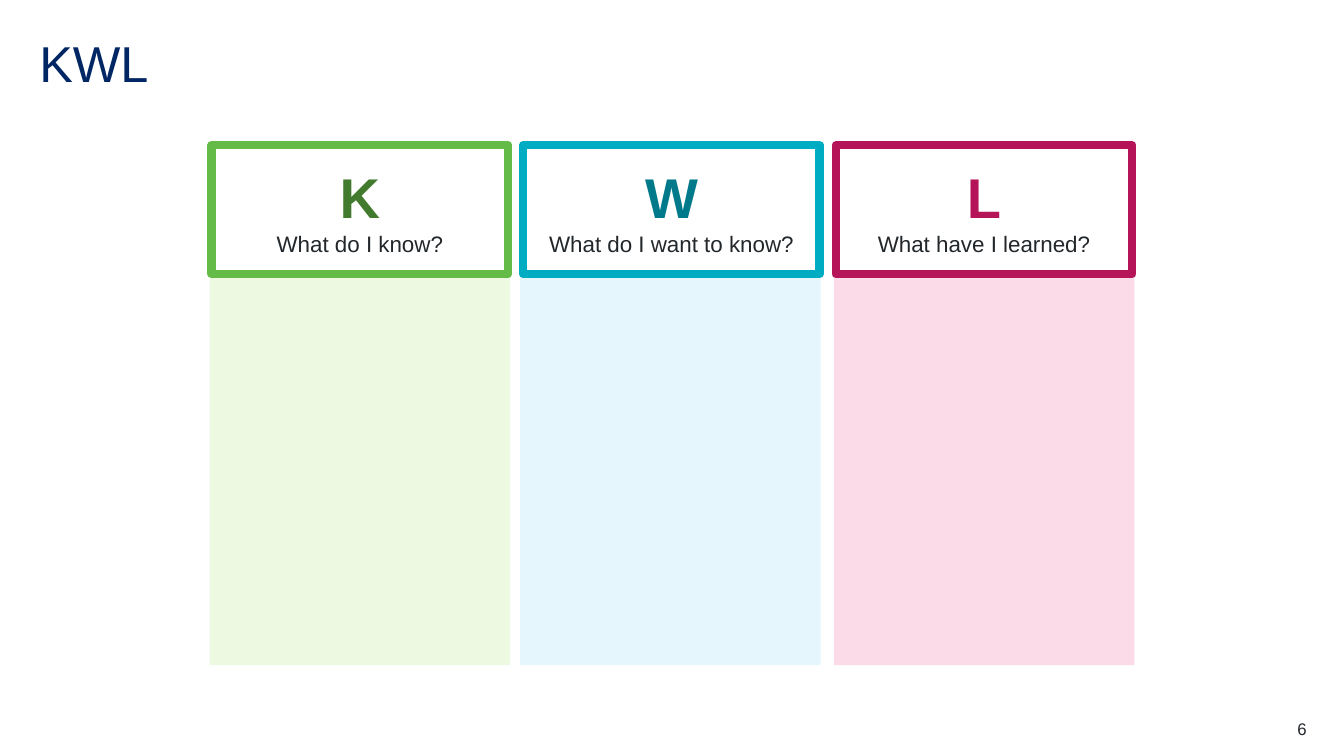
from lxml import etree
from pptx import Presentation
from pptx.dml.color import RGBColor
from pptx.enum import shapes, text
from pptx.oxml.ns import qn
from pptx.util import Inches, Pt

FONT = "Arial"
NAVY = RGBColor(0x00, 0x26, 0x64)
INK = RGBColor(0x22, 0x27, 0x2B)
GREEN = RGBColor(0x64, 0xBB, 0x47)
DARK_GREEN = RGBColor(0x42, 0x7B, 0x2D)
PALE_GREEN = RGBColor(0xED, 0xF9, 0xE0)
TEAL = RGBColor(0x00, 0xAC, 0xC2)
DARK_TEAL = RGBColor(0x00, 0x7A, 0x8A)
PALE_BLUE = RGBColor(0xE5, 0xF7, 0xFC)
MAGENTA = RGBColor(0xB5, 0x14, 0x58)
PALE_PINK = RGBColor(0xFB, 0xDB, 0xE7)

# letter, question, header left, panel left, border, letter colour, panel colour
COLUMNS = [
    ("K", "What do I know?", 2.1, 2.08, GREEN, DARK_GREEN, PALE_GREEN),
    ("W", "What do I want to know?", 5.19, 5.16, TEAL, DARK_TEAL, PALE_BLUE),
    ("L", "What have I learned?", 8.29, 8.27, MAGENTA, MAGENTA, PALE_PINK),
]


def write(para, words, size, color, bold=False, align=text.PP_ALIGN.LEFT,
          spacing=1.0):
    para.alignment = align
    para.line_spacing = spacing
    span = para.add_run()
    span.text = words
    span.font.name = FONT
    span.font.size = Pt(size)
    span.font.bold = bold
    span.font.color.rgb = color


def add_label(page, left, top, width, height, words, **style):
    """Add a one-line text box without insets."""
    box = page.shapes.add_textbox(
        Inches(left), Inches(top), Inches(width), Inches(height))
    frame = box.text_frame
    frame.word_wrap = True
    frame.margin_left = frame.margin_right = 0
    frame.margin_top = frame.margin_bottom = 0
    write(frame.paragraphs[0], words, **style)


def add_rectangle(page, left, top, width, height):
    box = page.shapes.add_shape(
        shapes.MSO_SHAPE.RECTANGLE,
        Inches(left), Inches(top), Inches(width), Inches(height))
    box.shadow.inherit = False
    return box


def add_panel(page, left, color):
    panel = add_rectangle(page, left, 2.76, 2.98, 3.84)
    panel.fill.solid()
    panel.fill.fore_color.rgb = color
    panel.line.fill.background()


def add_header(page, left, letter, question, border, letter_color):
    """Add a framed header with rounded line joins."""
    header = add_rectangle(page, left, 1.44, 2.94, 1.28)
    header.fill.background()
    header.line.color.rgb = border
    header.line.width = Pt(6)
    etree.SubElement(header.line._get_or_add_ln(), qn("a:round"))
    frame = header.text_frame
    frame.word_wrap = True
    frame.vertical_anchor = text.MSO_ANCHOR.MIDDLE
    center = text.PP_ALIGN.CENTER
    write(frame.paragraphs[0], letter, 40, letter_color, bold=True, align=center)
    write(frame.add_paragraph(), question, 16, INK, align=center)


def main():
    deck = Presentation()
    deck.slide_width = Inches(13.33)
    deck.slide_height = Inches(7.5)
    page = deck.slides.add_slide(deck.slide_layouts[6])

    add_label(page, 0.39, 0.39, 12.56, 0.6, "KWL",
              size=36, color=NAVY, spacing=0.9)
    for letter, question, left, panel_left, border, dark, pale in COLUMNS:
        add_header(page, left, letter, question, border, dark)
        add_panel(page, panel_left, pale)
    add_label(page, 12.17, 7.13, 0.79, 0.2, "6",
              size=12, color=INK, align=text.PP_ALIGN.RIGHT)

    deck.save("out.pptx")


if __name__ == "__main__":
    main()
